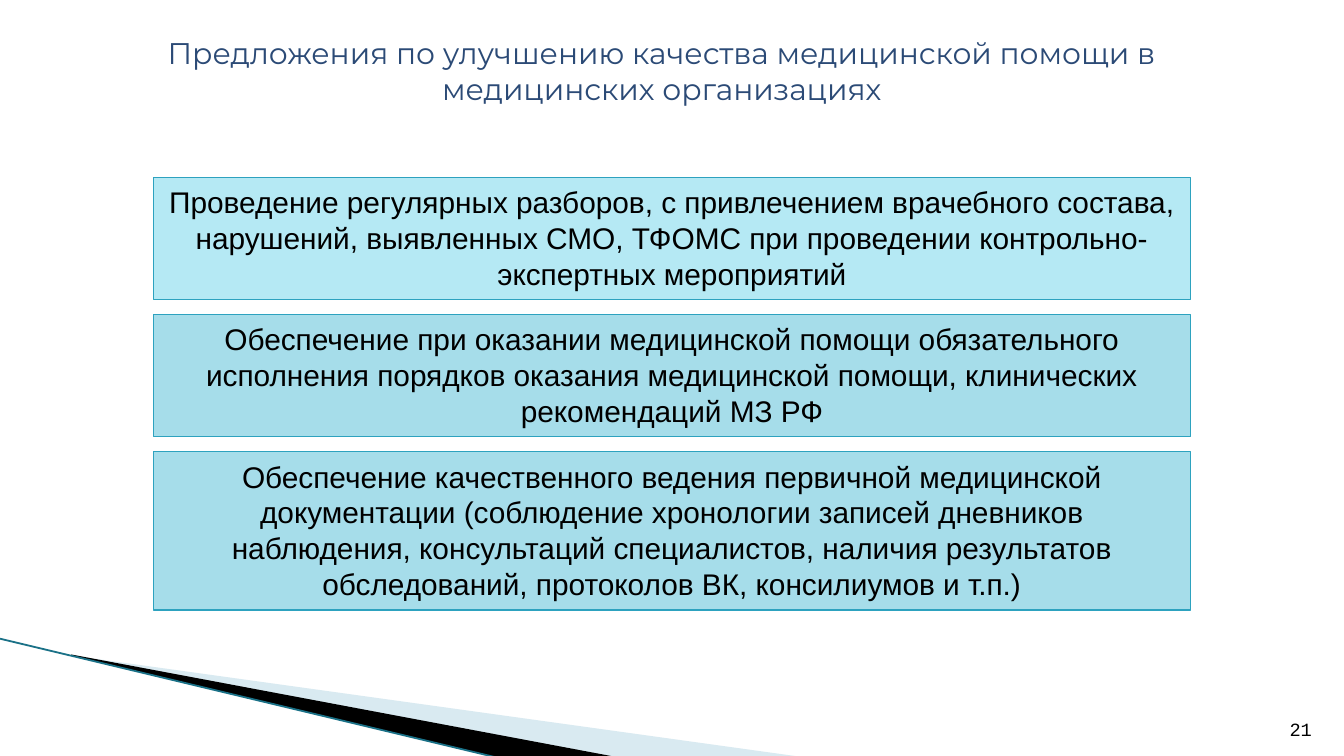
from lxml import etree
from pptx import Presentation
from pptx.dml.color import RGBColor
from pptx.enum.shapes import MSO_CONNECTOR, MSO_SHAPE
from pptx.enum.text import MSO_ANCHOR, PP_ALIGN
from pptx.oxml.ns import qn
from pptx.util import Inches, Pt

RECT = MSO_SHAPE.RECTANGLE
STRAIGHT = MSO_CONNECTOR.STRAIGHT
TOP, MIDDLE, BOTTOM = MSO_ANCHOR.TOP, MSO_ANCHOR.MIDDLE, MSO_ANCHOR.BOTTOM
CENTER, RIGHT = PP_ALIGN.CENTER, PP_ALIGN.RIGHT

BLACK = RGBColor(0x00, 0x00, 0x00)
NAVY = RGBColor(0x2B, 0x4A, 0x76)
PALE_BLUE = RGBColor(0xA0, 0xCB, 0xDC)
DARK_TEAL = RGBColor(0x1A, 0x71, 0x87)
BORDER = RGBColor(0x2D, 0xA2, 0xBF)
LIGHT_CYAN = RGBColor(0xB5, 0xE9, 0xF4)
CYAN = RGBColor(0xA6, 0xDD, 0xEA)

TITLE = "Предложения по улучшению качества медицинской помощи в медицинских организациях"
PROPOSALS = [
    ("Проведение регулярных разборов, с привлечением врачебного состава, "
     "нарушений, выявленных СМО, ТФОМС при проведении контрольно-экспертных "
     "мероприятий", 0.91, LIGHT_CYAN),
    ("Обеспечение при оказании медицинской помощи обязательного исполнения "
     "порядков оказания медицинской помощи, клинических рекомендаций МЗ РФ",
     0.91, CYAN),
    ("Обеспечение качественного ведения первичной медицинской документации "
     "(соблюдение хронологии записей дневников наблюдения, консультаций "
     "специалистов, наличия результатов обследований, протоколов ВК, "
     "консилиумов и т.п.)", 1.18, CYAN),
]
BOX_LEFT, BOX_TOP, BOX_WIDTH, BOX_GAP = 1.14, 1.32, 7.72, 0.11


def set_text(sp, text, font, size, color, align, anchor):
    tf = sp.text_frame
    tf.word_wrap = True
    tf.vertical_anchor = anchor
    p = tf.paragraphs[0]
    p.text = text
    p.alignment = align
    p.font.name = font
    p.font.size = Pt(size)
    p.font.color.rgb = color


def add_label(s, box, *style):
    sp = s.shapes.add_textbox(*map(Inches, box))
    set_text(sp, *style)


def add_wedge(s, points, color, alpha=None):
    """Draw a filled outline; alpha is its opacity in percent."""
    start, *rest = [(Inches(x), Inches(y)) for x, y in points]
    builder = s.shapes.build_freeform(*start)
    builder.add_line_segments(rest, close=True)
    sp = builder.convert_to_shape()
    sp.shadow.inherit = False
    sp.fill.solid()
    sp.fill.fore_color.rgb = color
    sp.line.fill.background()
    if alpha is not None:
        clr = sp._element.spPr.find(qn("a:solidFill"))[0]
        etree.SubElement(clr, qn("a:alpha"), val=str(alpha * 1000))


def add_edge_line(s, start, end):
    line = s.shapes.add_connector(STRAIGHT, *map(Inches, start + end))
    line.line.color.rgb = DARK_TEAL
    line.line.width = Pt(0.95)
    etree.SubElement(line._element.spPr, qn("a:effectLst"))


def add_proposal(s, top, height, text, fill):
    sp = s.shapes.add_shape(
        RECT, *map(Inches, (BOX_LEFT, top, BOX_WIDTH, height)))
    sp.shadow.inherit = False
    sp.fill.solid()
    sp.fill.fore_color.rgb = fill
    sp.line.color.rgb = BORDER
    sp.line.width = Pt(0.75)
    set_text(sp, text, "Arial", 16, BLACK, CENTER, TOP)


def main():
    prs = Presentation()
    prs.slide_width = Inches(10)
    prs.slide_height = prs.slide_width * 9 // 16
    s = prs.slides.add_slide(prs.slide_layouts[6])

    add_wedge(s, [(0.55, 4.88), (5.95, 5.63), (4.56, 5.63)], PALE_BLUE, 40)
    add_wedge(s, [(0.53, 4.87), (4.57, 5.63), (3.72, 5.64), (0.54, 4.88)], BLACK)
    add_edge_line(s, (-0.01, 4.75), (3.71, 5.64))

    add_label(s, (9.46, 5.26, 0.4, 0.3), "21", "Courier New", 10, BLACK, RIGHT, BOTTOM)
    add_label(s, (0.91, 0.21, 8.03, 0.64), TITLE, "Montserrat", 16, NAVY, CENTER, TOP)

    top = BOX_TOP
    for text, height, fill in PROPOSALS:
        add_proposal(s, top, height, text, fill)
        top += height + BOX_GAP

    prs.save("out.pptx")


if __name__ == "__main__":
    main()
